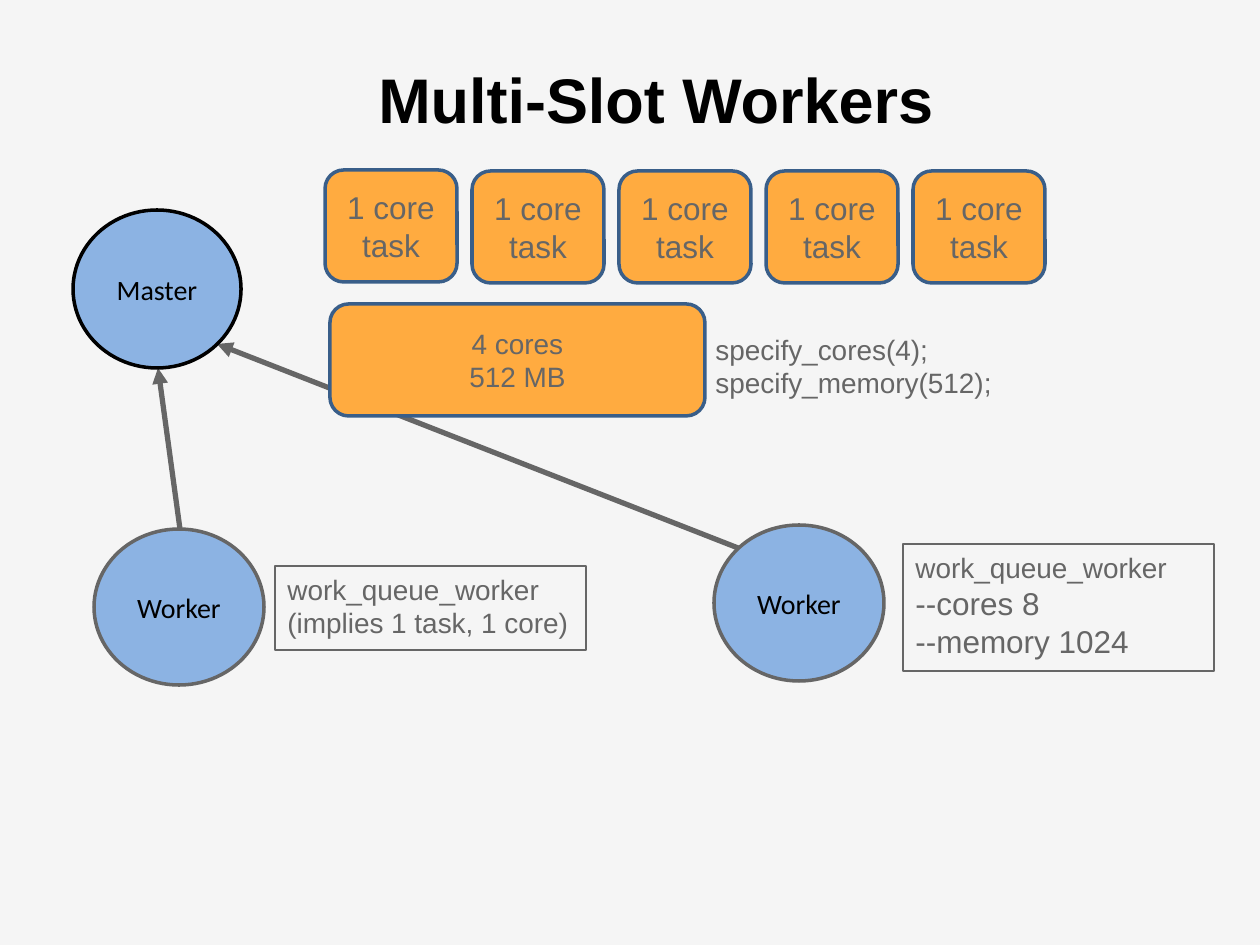
from dataclasses import dataclass
from typing import Optional

from lxml.etree import SubElement
from pptx import Presentation
from pptx.dml.color import RGBColor
from pptx.enum.shapes import MSO_CONNECTOR, MSO_SHAPE
from pptx.enum.text import MSO_ANCHOR, MSO_AUTO_SIZE, PP_ALIGN
from pptx.oxml.ns import qn
from pptx.util import Emu, Pt

EMU_PER_PX = 914400 / 126
BACKGROUND = RGBColor(0xF5, 0xF5, 0xF5)
BLACK = RGBColor(0x00, 0x00, 0x00)
GRAY = RGBColor(0x66, 0x66, 0x66)
BLUE = RGBColor(0x8C, 0xB3, 0xE3)
NAVY = RGBColor(0x39, 0x5E, 0x89)
ORANGE = RGBColor(0xFF, 0xAB, 0x40)


@dataclass(frozen=True)
class Box:
    left: int
    top: int
    width: int
    height: int


@dataclass(frozen=True)
class Style:
    preset: MSO_SHAPE
    fill: Optional[RGBColor]
    line: Optional[RGBColor]
    line_width: float
    font: str
    color: RGBColor
    centered: bool


@dataclass(frozen=True)
class Node:
    box: Box
    style: Style
    lines: tuple[str, ...]
    sizes: tuple[int, ...]


@dataclass(frozen=True)
class Arrow:
    head_x: int
    head_y: int
    end_x: int
    end_y: int


MASTER = Style(MSO_SHAPE.OVAL, BLUE, BLACK, 2, "Calibri", BLACK, True)
WORKER = Style(MSO_SHAPE.OVAL, BLUE, GRAY, 2, "Calibri", BLACK, True)
TASK = Style(MSO_SHAPE.ROUNDED_RECTANGLE, ORANGE, NAVY, 2, "Arial", GRAY, True)
COMMAND = Style(MSO_SHAPE.RECTANGLE, None, GRAY, 0.75, "Arial", GRAY, False)
CALLS = Style(MSO_SHAPE.RECTANGLE, None, None, 0, "Arial", GRAY, False)

TITLE_BOX = Box(105, 54, 1102, 188)
ARROWS = (Arrow(217, 344, 738, 548), Arrow(158, 368, 180, 529))
TASKS = tuple(
    Node(Box(325 + 147 * column, 171 if column else 170, 132, 112), TASK,
         ("1 core", "task"), (18, 18))
    for column in range(5)
)
NODES = (
    Node(Box(73, 210, 168, 158), MASTER, ("Master",), (16,)),
    Node(Box(714, 525, 170, 156), WORKER, ("Worker",), (16,)),
    Node(Box(903, 544, 311, 127), COMMAND,
         ("work_queue_worker", "--cores 8", "--memory 1024"), (16, 18, 18)),
    *TASKS,
    Node(Box(330, 304, 375, 112), TASK, ("4 cores", "512 MB"), (16, 16)),
    Node(Box(703, 326, 305, 115), CALLS,
         ("specify_cores(4);", "specify_memory(512);"), (16, 16)),
    Node(Box(94, 529, 170, 156), WORKER, ("Worker",), (16,)),
    Node(Box(275, 566, 311, 84), COMMAND,
         ("work_queue_worker", "(implies 1 task, 1 core)"), (16, 16)),
)


def px(length: int) -> Emu:
    """Convert pixels to EMU."""
    return Emu(round(length * EMU_PER_PX))


def place(box: Box) -> tuple[Emu, Emu, Emu, Emu]:
    """Return the box as left, top, width and height in EMU."""
    return px(box.left), px(box.top), px(box.width), px(box.height)


def set_title(slide) -> None:
    """Fill, move and format the title placeholder."""
    title = slide.shapes.title
    title.left, title.top, title.width, title.height = place(TITLE_BOX)
    frame = title.text_frame
    frame.text = "Multi-Slot Workers"
    frame.auto_size = MSO_AUTO_SIZE.NONE
    frame.vertical_anchor = MSO_ANCHOR.TOP
    paragraph = frame.paragraphs[0]
    paragraph.alignment = PP_ALIGN.CENTER
    font = paragraph.font
    font.name, font.size, font.bold = "Arial", Pt(36), True
    font.color.rgb = BLACK


def draw_arrow(slide, arrow: Arrow) -> None:
    """Draw a line with an arrowhead at its start."""
    connector = slide.shapes.add_connector(
        MSO_CONNECTOR.STRAIGHT, px(arrow.head_x), px(arrow.head_y),
        px(arrow.end_x), px(arrow.end_y))
    connector.line.color.rgb = GRAY
    connector.line.width = Pt(3)
    SubElement(connector.line._get_or_add_ln(), qn("a:headEnd"), type="triangle")
    SubElement(connector._element.spPr, qn("a:effectLst"))


def draw_node(slide, node: Node) -> None:
    """Draw a shape or text box with one paragraph per line."""
    style = node.style
    if style.line is None:
        shape = slide.shapes.add_textbox(*place(node.box))
    else:
        shape = slide.shapes.add_shape(style.preset, *place(node.box))
        shape.shadow.inherit = False
        shape.line.color.rgb = style.line
        shape.line.width = Pt(style.line_width)
        if style.fill is None:
            shape.fill.background()
        else:
            shape.fill.solid()
            shape.fill.fore_color.rgb = style.fill
    frame = shape.text_frame
    frame.word_wrap = True
    frame.vertical_anchor = MSO_ANCHOR.MIDDLE if style.centered else MSO_ANCHOR.TOP
    frame.text = "\n".join(node.lines)
    for paragraph, size in zip(frame.paragraphs, node.sizes):
        paragraph.alignment = PP_ALIGN.CENTER if style.centered else PP_ALIGN.LEFT
        paragraph.font.name = style.font
        paragraph.font.size = Pt(size)
        paragraph.font.color.rgb = style.color


def main() -> None:
    """Build and save the slide."""
    presentation = Presentation()
    presentation.slide_width, presentation.slide_height = px(1260), px(945)
    slide = presentation.slides.add_slide(presentation.slide_layouts[5])
    slide.background.fill.solid()
    slide.background.fill.fore_color.rgb = BACKGROUND
    set_title(slide)
    for arrow in ARROWS:
        draw_arrow(slide, arrow)
    for node in NODES:
        draw_node(slide, node)
    presentation.save("out.pptx")


if __name__ == "__main__":
    main()
